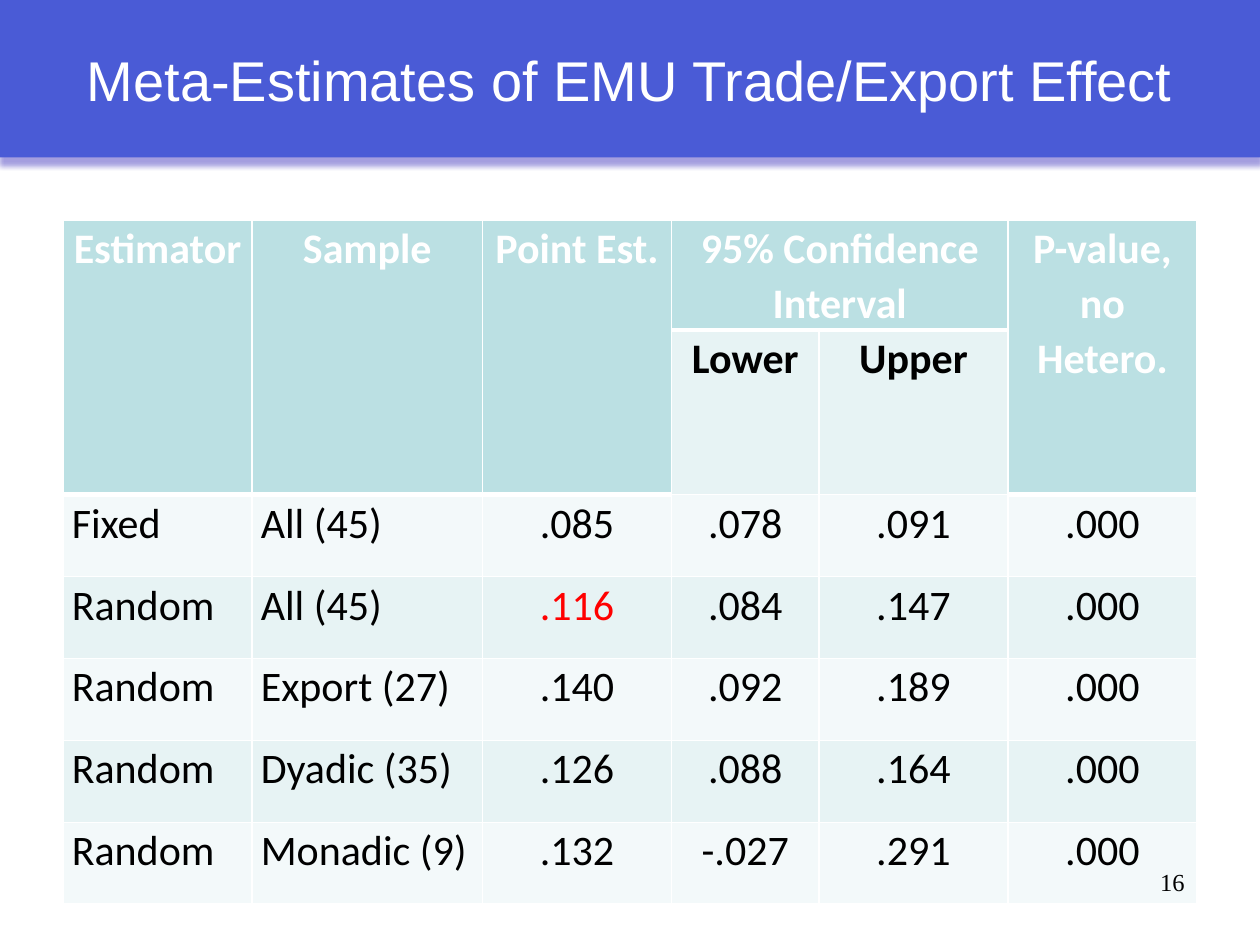
from dataclasses import dataclass

from lxml import etree
from pptx import Presentation
from pptx.dml.color import RGBColor
from pptx.enum.text import MSO_ANCHOR, MSO_AUTO_SIZE, PP_ALIGN
from pptx.oxml.ns import qn
from pptx.util import Inches, Pt

LEFT, CENTER, RIGHT = PP_ALIGN.LEFT, PP_ALIGN.CENTER, PP_ALIGN.RIGHT
MIDDLE = MSO_ANCHOR.MIDDLE
NO_AUTOFIT = MSO_AUTO_SIZE.NONE
TITLE_ONLY = 5


@dataclass(frozen=True)
class Theme:
    banner: str = "4A5BD6"
    banner_shadow: str = "4A3FC0"
    white: str = "FFFFFF"
    black: str = "000000"
    highlight: str = "FF0000"
    header: str = "BBE0E3"
    band_dark: str = "E7F3F4"
    band_light: str = "F3F9FA"
    title_font: str = "Arial"
    table_font: str = "Calibri"
    number_font: str = "Times New Roman"
    title_size: int = 32
    table_size: int = 24
    number_size: int = 14
    thin: int = 1
    thick: int = 3


THEME = Theme()

COLUMN_WIDTHS = [1.5, 1.83, 1.5, 1.17, 1.5, 1.5]
ROW_HEIGHTS = [0.65, 0.87] + [0.65] * 5
HEADER_ROWS = 2
TEXT_COLUMNS = 2
INTERVAL_COLUMNS = (3, 4)
HIGHLIGHTED = (3, 2)
ROWS = [
    ["Estimator", "Sample", "Point Est.", "95% Confidence Interval", "", "P-value, no Hetero."],
    ["", "", "", "Lower", "Upper", ""],
    ["Fixed", "All (45)", ".085", ".078", ".091", ".000"],
    ["Random", "All (45)", ".116", ".084", ".147", ".000"],
    ["Random", "Export (27)", ".140", ".092", ".189", ".000"],
    ["Random", "Dyadic (35)", ".126", ".088", ".164", ".000"],
    ["Random", "Monadic (9)", ".132", "-.027", ".291", ".000"],
]


def add_span(para, text, font, size, color, bold=False):
    span = para.add_run()
    span.text = text
    span.font.name = font
    span.font.size = Pt(size)
    span.font.bold = bold
    span.font.color.rgb = RGBColor.from_string(color)


def add_drop_shadow(shape, color):
    effects = etree.SubElement(shape.element.spPr, qn("a:effectLst"))
    shadow = etree.SubElement(
        effects, qn("a:outerShdw"), blurRad=str(Inches(0.04)), dist=str(Inches(0.06)),
        dir="5400000", algn="t", rotWithShape="0")
    tint = etree.SubElement(shadow, qn("a:srgbClr"), val=color)
    etree.SubElement(tint, qn("a:alpha"), val="50000")


def set_borders(cell, widths):
    """Draw white borders; widths maps the sides L, R, T and B to points."""
    properties = cell._tc.get_or_add_tcPr()
    for index, (side, width) in enumerate(widths.items()):
        line = etree.Element(qn(f"a:ln{side}"), w=str(Pt(width)))
        fill = etree.SubElement(line, qn("a:solidFill"))
        etree.SubElement(fill, qn("a:srgbClr"), val=THEME.white)
        properties.insert(index, line)


def build_title(page, left, top, width, height):
    title = page.shapes.title
    title.left, title.top, title.width, title.height = left, top, width, height
    title.fill.solid()
    title.fill.fore_color.rgb = RGBColor.from_string(THEME.banner)
    add_drop_shadow(title, THEME.banner_shadow)
    frame = title.text_frame
    frame.auto_size = NO_AUTOFIT
    frame.vertical_anchor = MIDDLE
    para = frame.paragraphs[0]
    para.alignment = CENTER
    add_span(para, "Meta-Estimates of EMU Trade/Export Effect",
             THEME.title_font, THEME.title_size, THEME.white)


def format_cell(cell, text, row, column):
    in_interval = column in INTERVAL_COLUMNS
    in_header = row == 0 or (row < HEADER_ROWS and not in_interval)
    last_header_row = 0 if in_interval else HEADER_ROWS - 1

    if in_header:
        fill, color = THEME.header, THEME.white
    else:
        fill = THEME.band_dark if row % 2 else THEME.band_light
        color = THEME.highlight if (row, column) == HIGHLIGHTED else THEME.black
    cell.fill.solid()
    cell.fill.fore_color.rgb = RGBColor.from_string(fill)
    set_borders(cell, {
        "L": THEME.thin,
        "R": THEME.thin,
        "T": THEME.thick if row == last_header_row + 1 else THEME.thin,
        "B": THEME.thick if in_header else THEME.thin,
    })
    cell.margin_left = cell.margin_right = Inches(0.07)
    cell.margin_top = cell.margin_bottom = 0
    if text:
        para = cell.text_frame.paragraphs[0]
        para.line_spacing = 1.07
        is_label = row >= HEADER_ROWS and column < TEXT_COLUMNS
        para.alignment = LEFT if is_label else CENTER
        add_span(para, text, THEME.table_font, THEME.table_size, color,
                 bold=row < HEADER_ROWS)


def build_table(page, left, top, width, height):
    table = page.shapes.add_table(
        len(ROWS), len(COLUMN_WIDTHS), left, top, width, height).table
    table.first_row = table.horz_banding = False
    for column, column_width in zip(table.columns, COLUMN_WIDTHS):
        column.width = Inches(column_width)
    for row, row_height in zip(table.rows, ROW_HEIGHTS):
        row.height = Inches(row_height)

    first, last = INTERVAL_COLUMNS
    table.cell(0, first).merge(table.cell(0, last))
    for column in range(len(COLUMN_WIDTHS)):
        if column not in INTERVAL_COLUMNS:
            table.cell(0, column).merge(table.cell(HEADER_ROWS - 1, column))

    for row, texts in enumerate(ROWS):
        for column, text in enumerate(texts):
            format_cell(table.cell(row, column), text, row, column)


def build_page_number(page, left, top, width, height):
    frame = page.shapes.add_textbox(left, top, width, height).text_frame
    frame.word_wrap = True
    para = frame.paragraphs[0]
    para.alignment = RIGHT
    add_span(para, "16", THEME.number_font, THEME.number_size, THEME.black)


def main():
    deck = Presentation()
    deck.slide_width, deck.slide_height = Inches(10), Inches(7.5)
    page = deck.slides.add_slide(deck.slide_layouts[TITLE_ONLY])
    build_title(page, 0, 0, deck.slide_width, Inches(1.25))
    build_table(page, Inches(0.5), Inches(1.75),
                Inches(sum(COLUMN_WIDTHS)), Inches(sum(ROW_HEIGHTS)))
    build_page_number(page, Inches(7.17), Inches(6.83), Inches(2.33), Inches(0.52))
    deck.save("out.pptx")


if __name__ == "__main__":
    main()
